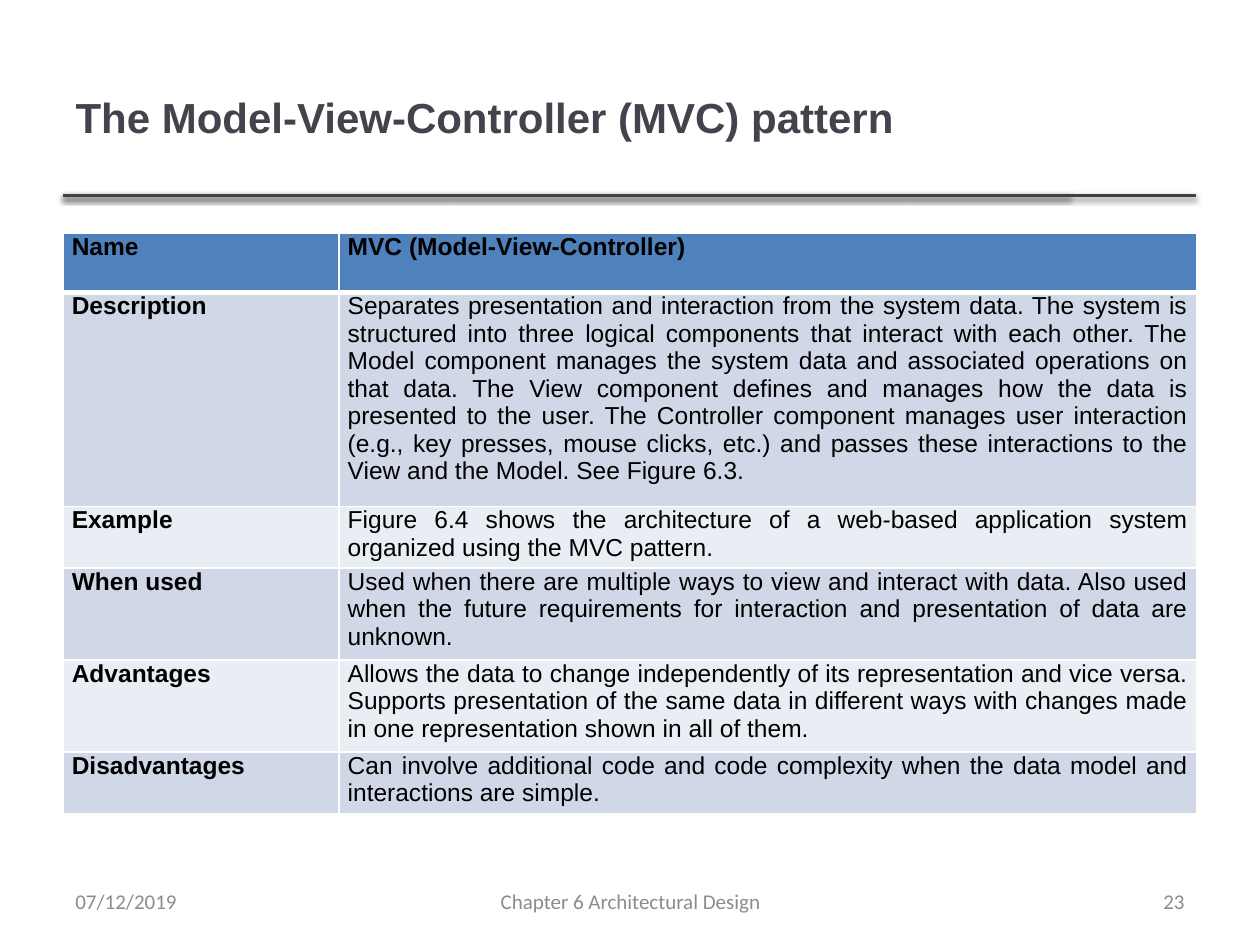
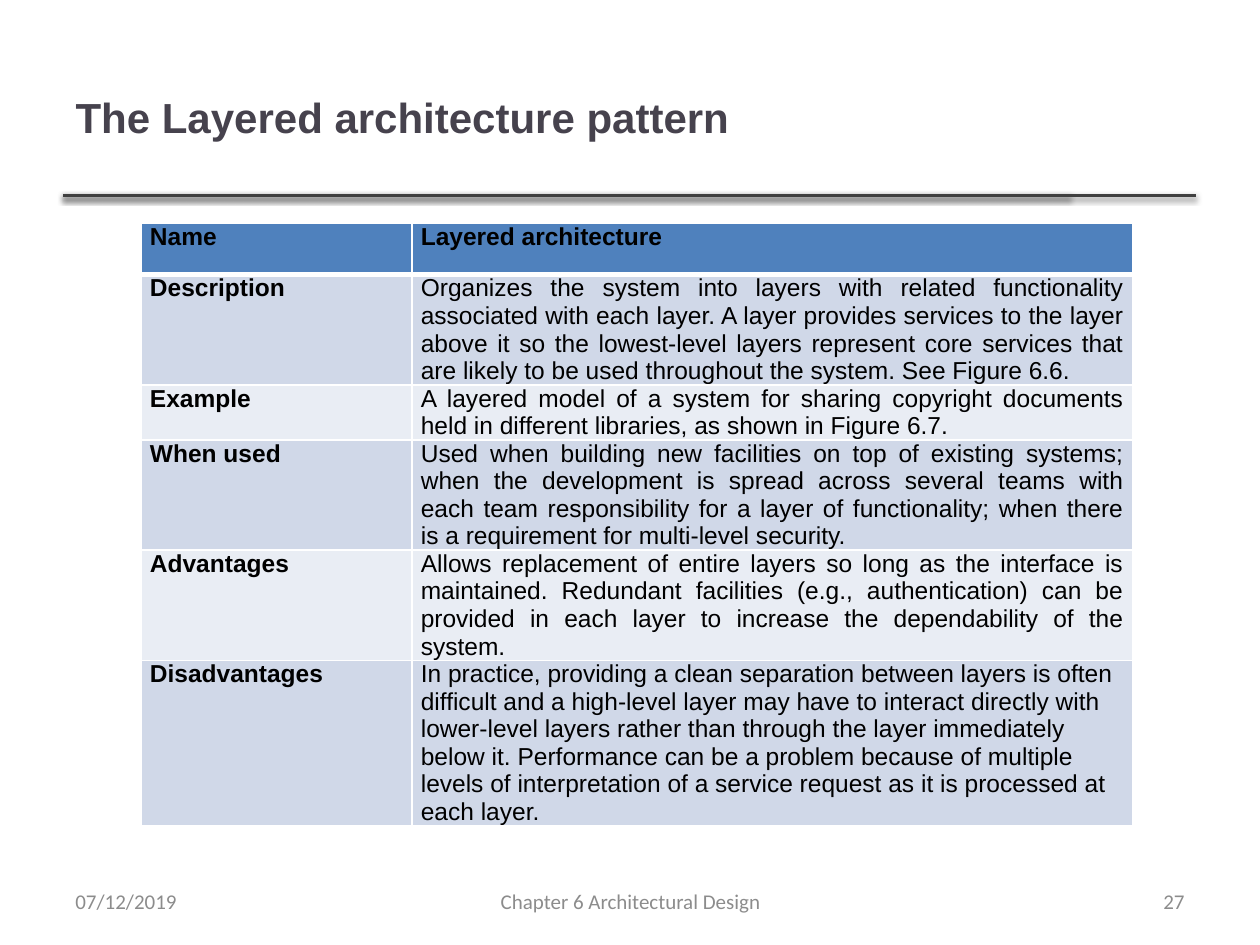
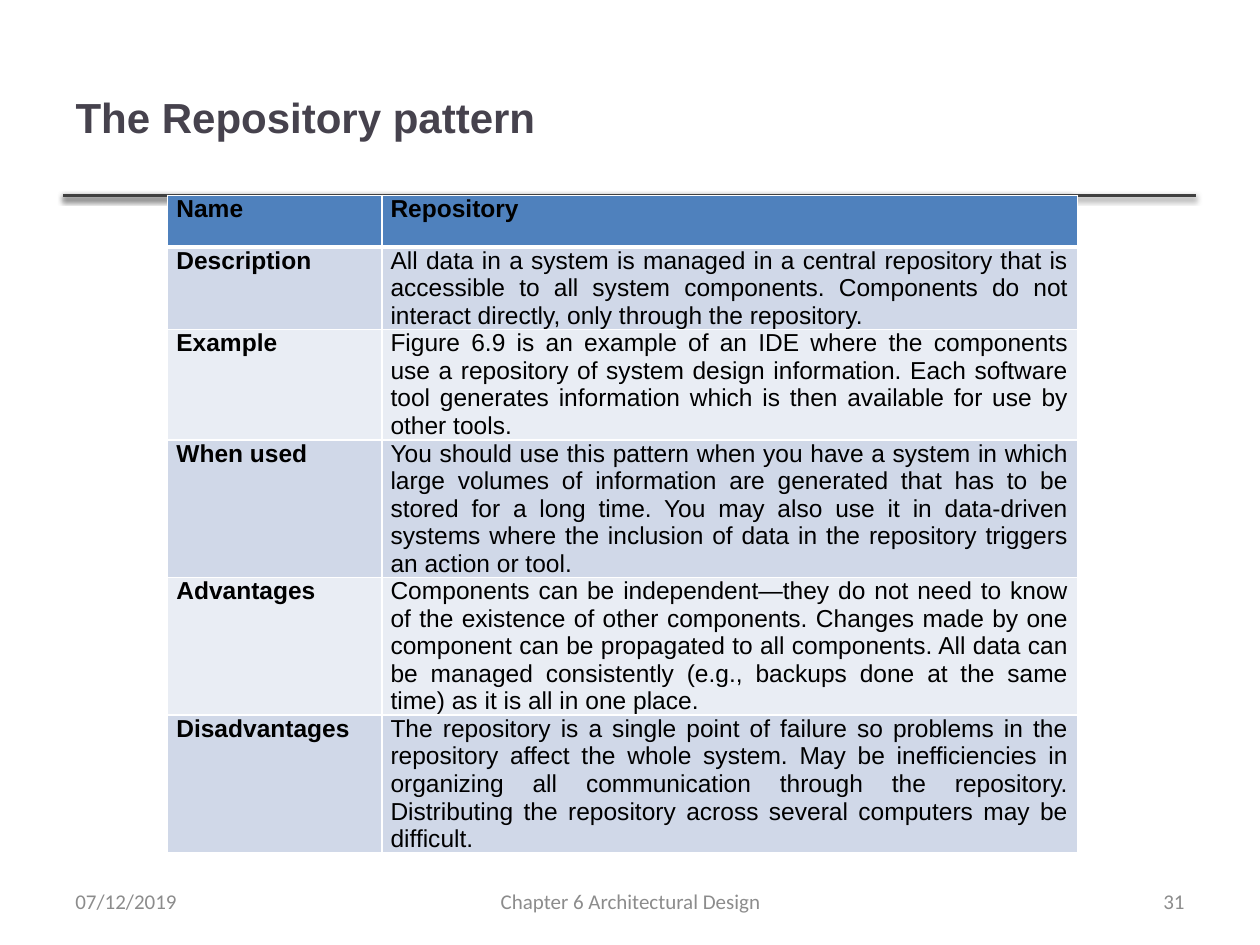
from lxml.etree import SubElement
from pptx import Presentation
from pptx.dml.color import RGBColor
from pptx.enum.shapes import MSO_CONNECTOR
from pptx.enum.text import MSO_ANCHOR, PP_ALIGN
from pptx.oxml import parse_xml
from pptx.oxml.ns import nsdecls, qn
from pptx.util import Inches, Pt

HUES = {
    "title": "46424D", "rule": "404040", "foot": "8C8C8C", "text": "000000",
    "head": "4F81BD", "odd": "D0D8E8", "even": "E9EDF4", "edge": "FFFFFF",
}
LABELS = ["Name", "Description", "Example", "When used", "Advantages", "Disadvantages"]
DATE = "07/12/2019"
FOOTER = "Chapter 6 Architectural Design"

SLIDES = [
    {
        "title": "The Model-View-Controller (MVC) pattern", "page": "23",
        "at": (0.5, 1.85), "cols": (2.19, 6.81),
        "rows": (0.47, 1.7, 0.49, 0.73, 0.73, 0.49),
        "cells": [
            "MVC (Model-View-Controller)",
            "Separates presentation and interaction from the system data. The system is "
            "structured into three logical components that interact with each other. The "
            "Model component manages the system data and associated operations on that data. "
            "The View component defines and manages how the data is presented to the user. "
            "The Controller component manages user interaction (e.g., key presses, mouse "
            "clicks, etc.) and passes these interactions to the View and the Model. "
            "See Figure 6.3.",
            "Figure 6.4 shows the architecture of a web-based application system organized "
            "using the MVC pattern.",
            "Used when there are multiple ways to view and interact with data. Also used "
            "when the future requirements for interaction and presentation of data are "
            "unknown.",
            "Allows the data to change independently of its representation and vice versa. "
            "Supports presentation of the same data in different ways with changes made in "
            "one representation shown in all of them.",
            "Can involve additional code and code complexity when the data model and "
            "interactions are simple.",
        ],
    },
    {
        "title": "The Layered architecture pattern", "page": "27",
        "at": (1.12, 1.77), "cols": (2.15, 5.72), "rows": (0.41,) * 6,
        "left": [5],
        "cells": [
            "Layered architecture",
            "Organizes the system into layers with related functionality associated with "
            "each layer. A layer provides services to the layer above it so the lowest-level "
            "layers represent core services that are likely to be used throughout the "
            "system. See Figure 6.6.",
            "A layered model of a system for sharing copyright documents held in different "
            "libraries, as shown in Figure 6.7.",
            "Used when building new facilities on top of existing systems; when the "
            "development is spread across several teams with each team responsibility for a "
            "layer of functionality; when there is a requirement for multi-level security.",
            "Allows replacement of entire layers so long as the interface is maintained. "
            "Redundant facilities (e.g., authentication) can be provided in each layer to "
            "increase the dependability of the system.",
            "In practice, providing a clean separation between layers is often difficult and "
            "a high-level layer may have to interact directly with lower-level layers rather "
            "than through the layer immediately below it. Performance can be a problem "
            "because of multiple levels of interpretation of a service request as it is "
            "processed at each layer.",
        ],
    },
    {
        "title": "The Repository pattern", "page": "31",
        "at": (1.33, 1.55), "cols": (1.7, 5.52), "rows": (0.41,) * 6,
        "cells": [
            "Repository",
            "All data in a system is managed in a central repository that is accessible to "
            "all system components. Components do not interact directly, only through the "
            "repository.",
            "Figure 6.9 is an example of an IDE where the components use a repository of "
            "system design information. Each software tool generates information which is "
            "then available for use by other tools.",
            "You should use this pattern when you have a system in which large volumes of "
            "information are generated that has to be stored for a long time. You may also "
            "use it in data-driven systems where the inclusion of data in the repository "
            "triggers an action or tool.",
            "Components can be independent—they do not need to know of the existence of "
            "other components. Changes made by one component can be propagated to all "
            "components. All data can be managed consistently (e.g., backups done at the "
            "same time) as it is all in one place.",
            "The repository is a single point of failure so problems in the repository "
            "affect the whole system. May be inefficiencies in organizing all communication "
            "through the repository. Distributing the repository across several computers "
            "may be difficult.",
        ],
    },
]


def style(frame, size, hue, face, align, bold=False):
    para = frame.paragraphs[0]
    para.alignment = align
    for run in para.runs:
        run.font.size = Pt(size)
        run.font.name = face
        run.font.bold = bold
        run.font.color.rgb = RGBColor.from_string(HUES[hue])


def add_rule(slide, end):
    y = Inches(1.55)
    rule = slide.shapes.add_connector(MSO_CONNECTOR.STRAIGHT, Inches(0.5), y, Inches(end), y)
    rule.line.width = Pt(2)
    rule.line.color.rgb = RGBColor.from_string(HUES["rule"])
    rule._element.spPr.append(parse_xml(
        f'<a:effectLst {nsdecls("a")}><a:outerShdw blurRad="{Pt(3.1)}" dist="{Pt(1.6)}" '
        'dir="5400000" rotWithShape="0"><a:srgbClr val="000000"><a:alpha val="38000"/>'
        '</a:srgbClr></a:outerShdw></a:effectLst>'))


def add_title(slide, text):
    title = slide.shapes.title
    title.left, title.top = Inches(0.5), Inches(0.3)
    title.width, title.height = Inches(7.98), Inches(1.25)
    title.text_frame.text = text
    title.text_frame.vertical_anchor = MSO_ANCHOR.MIDDLE
    style(title.text_frame, 24, "title", "Arial", PP_ALIGN.LEFT, True)


def add_foot(slide, text, left, width, align):
    box = slide.shapes.add_textbox(Inches(left), Inches(6.95), Inches(width), Inches(0.4))
    frame = box.text_frame
    frame.word_wrap = True
    frame.vertical_anchor = MSO_ANCHOR.MIDDLE
    frame.text = text
    style(frame, 12, "foot", "Calibri", align)


def add_edges(cell, top, base):
    props = cell._tc.get_or_add_tcPr()
    for side, width in (("L", 1), ("R", 1), ("T", top), ("B", base)):
        line = SubElement(props, qn(f"a:ln{side}"), w=str(Pt(width)))
        fill = SubElement(line, qn("a:solidFill"))
        SubElement(fill, qn("a:srgbClr"), val=HUES["edge"])


def fill_cell(cell, text, row, bold, align):
    add_edges(cell, 3 if row == 1 else 1, 3 if row == 0 else 1)
    cell.margin_left = cell.margin_right = Inches(0.07)
    cell.margin_top = cell.margin_bottom = 0
    shade = "head" if row == 0 else "odd" if row % 2 else "even"
    cell.fill.solid()
    cell.fill.fore_color.rgb = RGBColor.from_string(HUES[shade])
    cell.text_frame.text = text
    style(cell.text_frame, 14, "text", "Arial", align, bold)


def add_grid(slide, data):
    left, top = data["at"]
    cols, rows = data["cols"], data["rows"]
    grid = slide.shapes.add_table(
        len(rows), len(cols), Inches(left), Inches(top),
        Inches(sum(cols)), Inches(sum(rows))).table
    for col, width in zip(grid.columns, cols):
        col.width = Inches(width)
    for row, height in enumerate(rows):
        grid.rows[row].height = Inches(height)
        flush = row in data.get("left", [])
        align = PP_ALIGN.LEFT if flush else PP_ALIGN.JUSTIFY
        fill_cell(grid.cell(row, 0), LABELS[row], row, True, PP_ALIGN.JUSTIFY)
        fill_cell(grid.cell(row, 1), data["cells"][row], row, row == 0, align)


def main():
    deck = Presentation()
    deck.slide_width, deck.slide_height = Inches(10), Inches(7.5)
    for data in SLIDES:
        slide = deck.slides.add_slide(deck.slide_layouts[5])
        for end in (8.49, 9.49):
            add_rule(slide, end)
        add_title(slide, data["title"])
        add_grid(slide, data)
        add_foot(slide, FOOTER, 3.42, 3.17, PP_ALIGN.CENTER)
        add_foot(slide, data["page"], 7.17, 2.33, PP_ALIGN.RIGHT)
        add_foot(slide, DATE, 0.5, 2.33, PP_ALIGN.LEFT)
    deck.save("out.pptx")


if __name__ == "__main__":
    main()
